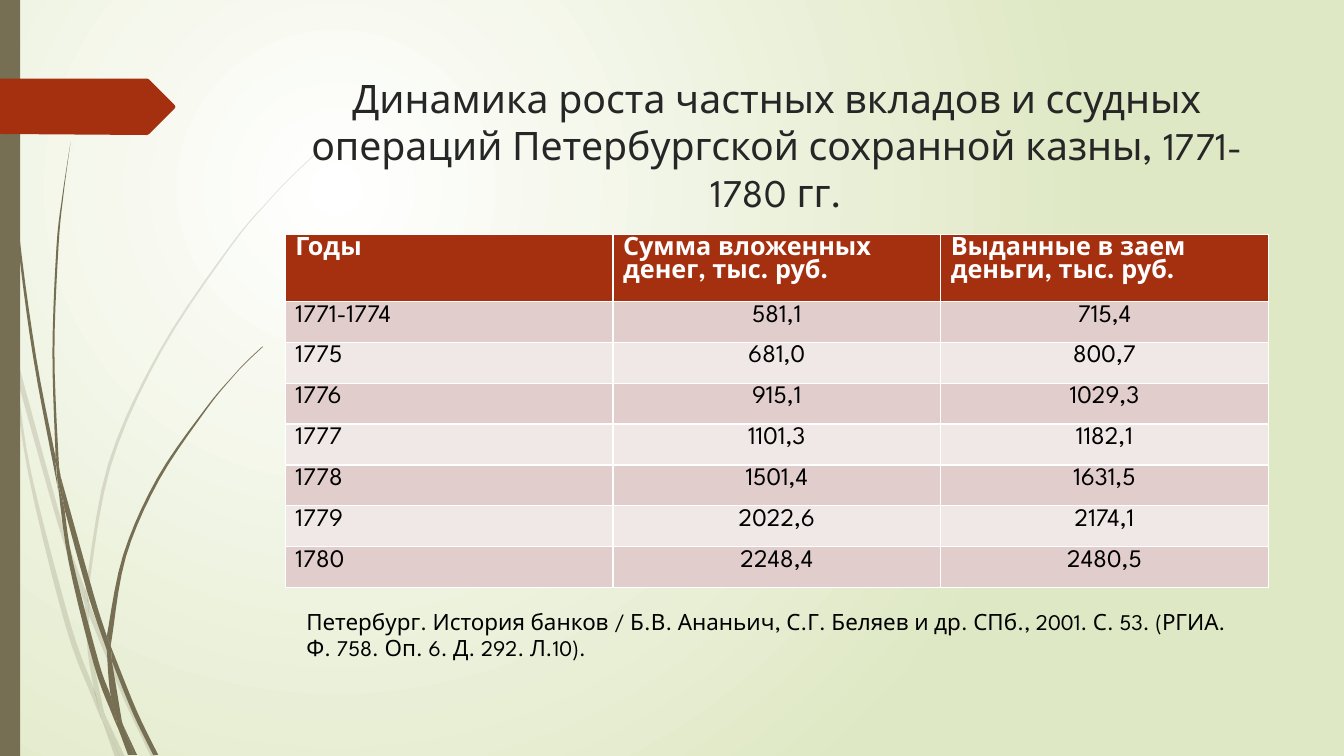
"""Builds a slide with a table of private deposits and loans, 1771-1780."""
from lxml.etree import SubElement
from pptx import Presentation
from pptx.dml.color import RGBColor
from pptx.enum.shapes import MSO_SHAPE as Shape
from pptx.enum.text import MSO_ANCHOR as Anchor, PP_ALIGN as Align
from pptx.oxml.ns import qn
from pptx.util import Inches, Pt

TITLE = "Динамика роста частных вкладов и ссудных операций Петербургской сохранной казны, 1771-1780 гг."
SOURCE = ("Петербург. История банков / Б.В. Ананьич, С.Г. Беляев и др. СПб., 2001. С. 53. "
          "(РГИА. Ф. 758. Оп. 6. Д. 292. Л.10).")
HEADER = ("Годы", "Сумма вложенных денег, тыс. руб.", "Выданные в заем деньги, тыс. руб.")
YEARS = [
    ("1771-1774", "581,1", "715,4"),
    ("1775", "681,0", "800,7"),
    ("1776", "915,1", "1029,3"),
    ("1777", "1101,3", "1182,1"),
    ("1778", "1501,4", "1631,5"),
    ("1779", "2022,6", "2174,1"),
    ("1780", "2248,4", "2480,5"),
]

THEME = {
    "font": "League Spartan", "title": 28, "table": 18, "source": 16,
    "stalk": "766F54", "accent": "A53010", "heading": "262626", "ink": "000000",
    "paper": "FFFFFF", "edge": "DFE8C4", "bands": ("E1CDCC", "F0E8E7"), "pale": 20,
}

PALE_BLADES = [
    ([(0.11, 3.5), (0.09, 3.22), (0, 2.82)], [(0, 2.99), (0.1, 3.44)]),
    ([(0.14, 3.45), (0.62, 5.2), (0.85, 5.86)], [(0.84, 5.99), (0.58, 5.22), (0.17, 3.76)]),
    ([(0.88, 5.96), (0.92, 6.07), (1.27, 6.92), (1.55, 7.51)],
     [(1.5, 7.51), (1.23, 6.94), (0.88, 6.1)]),
    ([(1.05, 7.11), (1.24, 7.51)], [(1.19, 7.51)]),
    ([(0.11, 3.5), (0.28, 4.7), (0.65, 6.21), (0.92, 6.93), (1.01, 7.14)],
     [(0.99, 7.07), (0.93, 6.83), (0.7, 6.19), (0.31, 4.69), (0.17, 3.76)]),
    ([(0.84, 5.99), (0.87, 6.46), (0.93, 6.83), (0.96, 6.92), (1.05, 7.11)],
     [(1.03, 7.06), (0.91, 6.46), (0.88, 6.1), (0.88, 6.08)]),
    ([(0.88, 5.96), (0.88, 5.84), (1.1, 4.62), (1.6, 3.49), (2.29, 2.45), (2.68, 1.98),
      (2.9, 1.75), (3.12, 1.54)],
     [(3.12, 1.53), (2.89, 1.75), (2.68, 1.97), (2.28, 2.44), (1.58, 3.48), (1.07, 4.61),
      (0.85, 5.84), (0.85, 5.86)]),
    ([(1.01, 7.14), (1.14, 7.51)], [(1.19, 7.51)]),
    ([(0.88, 6.08), (0.88, 5.96), (0.85, 5.86)], [(0.84, 5.99)]),
    ([(0.93, 6.83), (0.99, 7.07), (1.01, 7.14), (1.19, 7.51)], [(1.05, 7.11), (0.96, 6.92)]),
]
DARK_BLADES = [
    ([(0.03, 0), (0.04, 0.48), (0.07, 1.1), (0.17, 2.33), (0.33, 3.55), (0.56, 4.77), (0.57, 4.81)],
     [(0.55, 4.57), (0.55, 4.53), (0.36, 3.55), (0.19, 2.32), (0.08, 1.09), (0.05, 0.48), (0.04, 0)]),
    ([(0.6, 4.72), (0.93, 5.9), (1.06, 6.31)], [(1.06, 6.45), (0.88, 5.92), (0.64, 5.05)]),
    ([(1.1, 6.41), (1.13, 6.49), (1.36, 7.06), (1.57, 7.49)],
     [(1.52, 7.49), (1.32, 7.08), (1.11, 6.56)]),
    ([(0.57, 4.77), (0.68, 5.57), (0.93, 6.59), (1.11, 7.08), (1.17, 7.22)],
     [(1.16, 7.17), (1.1, 6.91), (0.98, 6.57), (0.72, 5.56), (0.64, 5.05)]),
    ([(0.6, 4.72), (0.58, 4.53), (0.54, 3.49), (0.58, 2.45), (0.63, 1.93), (0.7, 1.41)],
     [(0.7, 1.41), (0.62, 1.93), (0.56, 2.45), (0.52, 3.49), (0.55, 4.49)]),
    ([(1.22, 7.19), (1.36, 7.49)], [(1.33, 7.49)]),
    ([(0.55, 4.49), (0.6, 4.72), (0.64, 5.05)], [(0.57, 4.77), (0.55, 4.53)]),
    ([(1.1, 6.41), (1.11, 6.33), (1.25, 5.52), (1.58, 4.76), (2.05, 4.06), (2.31, 3.74),
      (2.45, 3.59), (2.61, 3.44)],
     [(2.6, 3.44), (2.45, 3.58), (2.31, 3.73), (2.04, 4.05), (1.56, 4.74), (1.22, 5.51),
      (1.06, 6.31)]),
    ([(1.17, 7.22), (1.27, 7.49)], [(1.31, 7.49)]),
    ([(1.06, 6.45), (1.1, 6.91), (1.22, 7.19)], [(1.21, 7.16), (1.11, 6.56), (1.09, 6.51)]),
    ([(1.06, 6.45), (1.11, 6.56)], [(1.1, 6.41), (1.06, 6.31)]),
    ([(1.1, 6.91), (1.16, 7.17), (1.17, 7.22), (1.3, 7.49)],
     [(1.33, 7.49), (1.22, 7.19), (1.16, 7.06)]),
]
BANNER = [(0, 0.78), (1.46, 0.78), (1.48, 0.79), (1.73, 1.04), (1.74, 1.06),
          (1.73, 1.08), (1.48, 1.33), (1.46, 1.34), (0, 1.33)]

TABLE_LEFT, TABLE_TOP, TABLE_WIDTH = 2.83, 2.33, 9.75
HEADER_HEIGHT, TABLE_HEIGHT = 0.56, 3.4
CURVE_STEPS = 5


def rgb(key):
    return RGBColor.from_string(THEME.get(key, key))


def smooth(edge):
    """Returns points of a curve that passes through every point of the edge."""
    padded = [edge[0], *edge, edge[-1]]
    curve = []
    for a, b, c, d in zip(padded, padded[1:], padded[2:], padded[3:]):
        for step in range(CURVE_STEPS):
            t = step / CURVE_STEPS
            curve.append(tuple(
                q + t * (r - p) / 2 + t * t * (2 * p - 5 * q + 4 * r - s) / 2
                + t ** 3 * (3 * q - p - 3 * r + s) / 2
                for p, q, r, s in zip(a, b, c, d)))
    return curve + [edge[-1]]


def paint(shape, color):
    shape.fill.solid()
    shape.fill.fore_color.rgb = rgb(color)
    shape.line.fill.background()
    shape.shadow.inherit = False


def add_outline(shapes, points, color):
    start, *rest = [(Inches(x), Inches(y)) for x, y in points]
    builder = shapes.build_freeform(*start)
    builder.add_line_segments(rest)
    outline = builder.convert_to_shape()
    paint(outline, color)
    return outline


def add_blades(slide, blades, opacity=None):
    group = slide.shapes.add_group_shape()
    for rising, returning in blades:
        blade = add_outline(group.shapes, smooth(rising) + smooth(returning), "stalk")
        if opacity:
            tint = blade.element.spPr.find(qn("a:solidFill"))[0]
            SubElement(tint, qn("a:alpha"), val=str(opacity * 1000))


def style(paragraph, size, color, align=Align.LEFT, bold=False):
    paragraph.alignment = align
    font = paragraph.font
    font.name, font.size, font.bold = THEME["font"], Pt(THEME[size]), bold
    font.color.rgb = rgb(color)


def add_text(slide, text, box, size, color, align=Align.LEFT):
    frame = slide.shapes.add_textbox(*map(Inches, box)).text_frame
    frame.word_wrap = True
    frame.text = text
    style(frame.paragraphs[0], size, color, align)


def add_background(slide):
    fill = slide.background.fill
    fill.gradient()
    for stop, color in zip(fill.gradient_stops, ("paper", "edge")):
        stop.color.rgb = rgb(color)
    gradient = slide.element.find(".//" + qn("a:gradFill"))
    gradient.remove(gradient.find(qn("a:lin")))
    circle = SubElement(gradient, qn("a:path"), path="circle")
    SubElement(circle, qn("a:fillToRect"), l="50000", t="50000", r="100000", b="100000")


def add_deposits(slide):
    rows = [HEADER, *YEARS]
    box = map(Inches, (TABLE_LEFT, TABLE_TOP, TABLE_WIDTH, TABLE_HEIGHT))
    table = slide.shapes.add_table(len(rows), len(HEADER), *box).table
    year_height = (TABLE_HEIGHT - HEADER_HEIGHT) / len(YEARS)
    for r, row in enumerate(rows):
        head = r == 0
        table.rows[r].height = Inches(HEADER_HEIGHT if head else year_height)
        for c, value in enumerate(row):
            cell = table.cell(r, c)
            cell.text = value
            cell.vertical_anchor = Anchor.TOP
            cell.margin_left = cell.margin_right = Inches(0.1)
            cell.margin_top = cell.margin_bottom = Inches(0.03)
            cell.fill.solid()
            cell.fill.fore_color.rgb = rgb("accent" if head else THEME["bands"][(r - 1) % 2])
            align = Align.LEFT if head or c == 0 else Align.CENTER
            style(cell.text_frame.paragraphs[0], "table", "paper" if head else "ink", align, head)


def main():
    deck = Presentation()
    deck.slide_width, deck.slide_height = Inches(13.33), Inches(7.5)
    slide = deck.slides.add_slide(deck.slide_layouts[6])
    add_background(slide)
    add_blades(slide, PALE_BLADES, THEME["pale"])
    add_blades(slide, DARK_BLADES)
    paint(slide.shapes.add_shape(Shape.RECTANGLE, 0, 0, Inches(0.2), deck.slide_height), "stalk")
    add_outline(slide.shapes, BANNER, "accent")
    add_text(slide, TITLE, (2.83, 0.69, 9.75, 1.4), "title", "heading", Align.CENTER)
    add_deposits(slide)
    add_text(slide, SOURCE, (2.94, 5.98, 9.53, 0.64), "source", "ink")
    deck.save("out.pptx")


if __name__ == "__main__":
    main()
